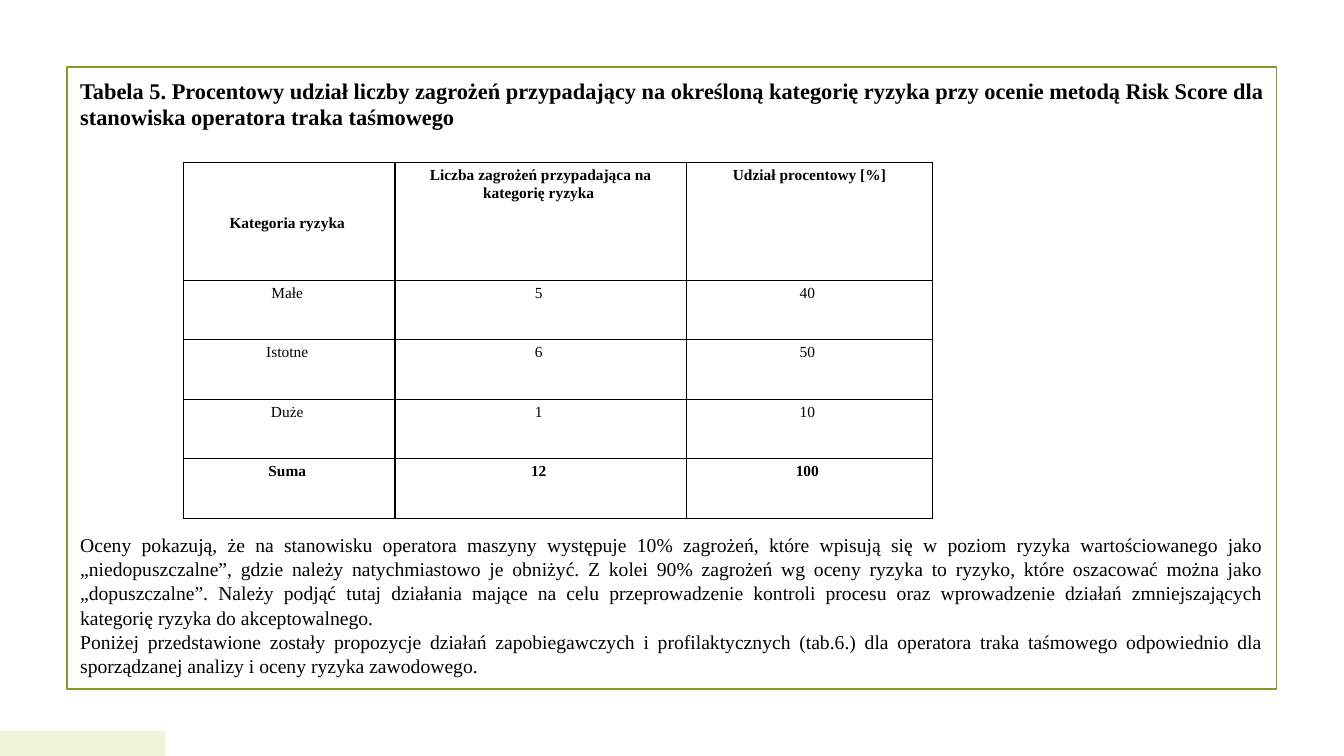
"""Build the slide with the share of hazards in each risk category."""
from lxml import etree
from pptx import Presentation
from pptx.dml.color import RGBColor
from pptx.enum import shapes, text
from pptx.oxml import ns
from pptx.util import Pt

TITLE = ("Tabela 5. Procentowy udział liczby zagrożeń przypadający na określoną kategorię ryzyka "
         "przy ocenie metodą Risk Score dla stanowiska operatora traka taśmowego")
ROWS = [
    ("Kategoria ryzyka ", "Liczba zagrożeń przypadająca na kategorię ryzyka ", "Udział procentowy [%] "),
    ("Małe ", "5 ", "40 "),
    ("Istotne ", "6 ", "50 "),
    ("Duże ", "1 ", "10 "),
    ("Suma ", "12 ", "100 "),
]
BODY = [
    "Oceny pokazują, że na stanowisku operatora maszyny występuje 10% zagrożeń, które wpisują się "
    "w poziom ryzyka wartościowanego jako „niedopuszczalne”, gdzie należy natychmiastowo je obniżyć. "
    "Z kolei 90% zagrożeń wg oceny ryzyka to ryzyko, które oszacować można jako „dopuszczalne”. "
    "Należy podjąć tutaj działania mające na celu przeprowadzenie kontroli procesu oraz wprowadzenie "
    "działań zmniejszających kategorię ryzyka do akceptowalnego.",
    "Poniżej przedstawione zostały propozycje działań zapobiegawczych i profilaktycznych (tab.6.) "
    "dla operatora traka taśmowego odpowiednio dla sporządzanej analizy i oceny ryzyka zawodowego.",
]
COLUMN_WIDTHS = [151.2, 208.1, 175.7]
ROW_HEIGHTS = [84.3] + [42.5] * 4
TABLE_LEFT, TABLE_TOP = 131, 116
TEXT_LEFT, TEXT_WIDTH = 50.2, 859.7
FONT = "Times New Roman"
BLACK = RGBColor(0x00, 0x00, 0x00)
OLIVE = RGBColor(0x83, 0x99, 0x2A)
PALE_GREEN = RGBColor(0xEF, 0xF5, 0xDA)


def add_rectangle(page, left, top, width, height):
    box = page.shapes.add_shape(shapes.MSO_SHAPE.RECTANGLE, Pt(left), Pt(top), Pt(width), Pt(height))
    box.shadow.inherit = False
    return box


def write(para, words, size, bold, align, spacing=1.0, after=0):
    para.alignment = align
    para.line_spacing = spacing
    para.space_after = Pt(after)
    span = para.add_run()
    span.text = words
    span.font.name = FONT
    span.font.size = Pt(size)
    span.font.bold = bold
    span.font.color.rgb = BLACK


def add_text(page, top, height, paragraphs, *style):
    box = page.shapes.add_textbox(Pt(TEXT_LEFT), Pt(top), Pt(TEXT_WIDTH), Pt(height))
    frame = box.text_frame
    frame.word_wrap = True
    for index, words in enumerate(paragraphs):
        para = frame.add_paragraph() if index else frame.paragraphs[0]
        write(para, words, *style)


def add_borders(cell):
    properties = cell._tc.get_or_add_tcPr()
    for position, side in enumerate(("lnL", "lnR", "lnT", "lnB")):
        line = etree.Element(ns.qn(f"a:{side}"), w=str(Pt(1)))
        fill = etree.SubElement(line, ns.qn("a:solidFill"))
        etree.SubElement(fill, ns.qn("a:srgbClr"), val=str(BLACK))
        properties.insert(position, line)


def add_risk_table(page):
    frame = page.shapes.add_table(len(ROWS), len(COLUMN_WIDTHS), Pt(TABLE_LEFT), Pt(TABLE_TOP),
                                  Pt(sum(COLUMN_WIDTHS)), Pt(sum(ROW_HEIGHTS)))
    table = frame.table
    table.horz_banding = False
    for column, width in zip(table.columns, COLUMN_WIDTHS):
        column.width = Pt(width)
    for row, height in zip(table.rows, ROW_HEIGHTS):
        row.height = Pt(height)
    for r, values in enumerate(ROWS):
        for c, words in enumerate(values):
            cell = table.cell(r, c)
            cell.margin_left = cell.margin_right = Pt(5.8)
            cell.margin_top, cell.margin_bottom = Pt(2.2), Pt(0)
            cell.fill.background()
            add_borders(cell)
            write(cell.text_frame.paragraphs[0], words, 11, r in (0, len(ROWS) - 1),
                  text.PP_ALIGN.CENTER, 1.07, 0.2)
    table.cell(0, 0).vertical_anchor = text.MSO_ANCHOR.MIDDLE
    table.cell(0, 2).margin_left = Pt(8.8)


def main():
    deck = Presentation()
    deck.slide_width, deck.slide_height = Pt(960), Pt(540)
    page = deck.slides.add_slide(deck.slide_layouts[6])
    border = add_rectangle(page, 47.8, 48, 864, 444)
    border.fill.background()
    border.line.color.rgb = OLIVE
    border.line.width = Pt(1.25)
    corner = add_rectangle(page, 0, 522, 118, 18)
    corner.fill.solid()
    corner.fill.fore_color.rgb = PALE_GREEN
    corner.line.fill.background()
    add_text(page, 51.2, 46, [TITLE], 16, True, text.PP_ALIGN.LEFT)
    add_risk_table(page)
    add_text(page, 376.6, 111.6, BODY, 14, False, text.PP_ALIGN.JUSTIFY, 1.03, 0.2)
    deck.save("out.pptx")


if __name__ == "__main__":
    main()
